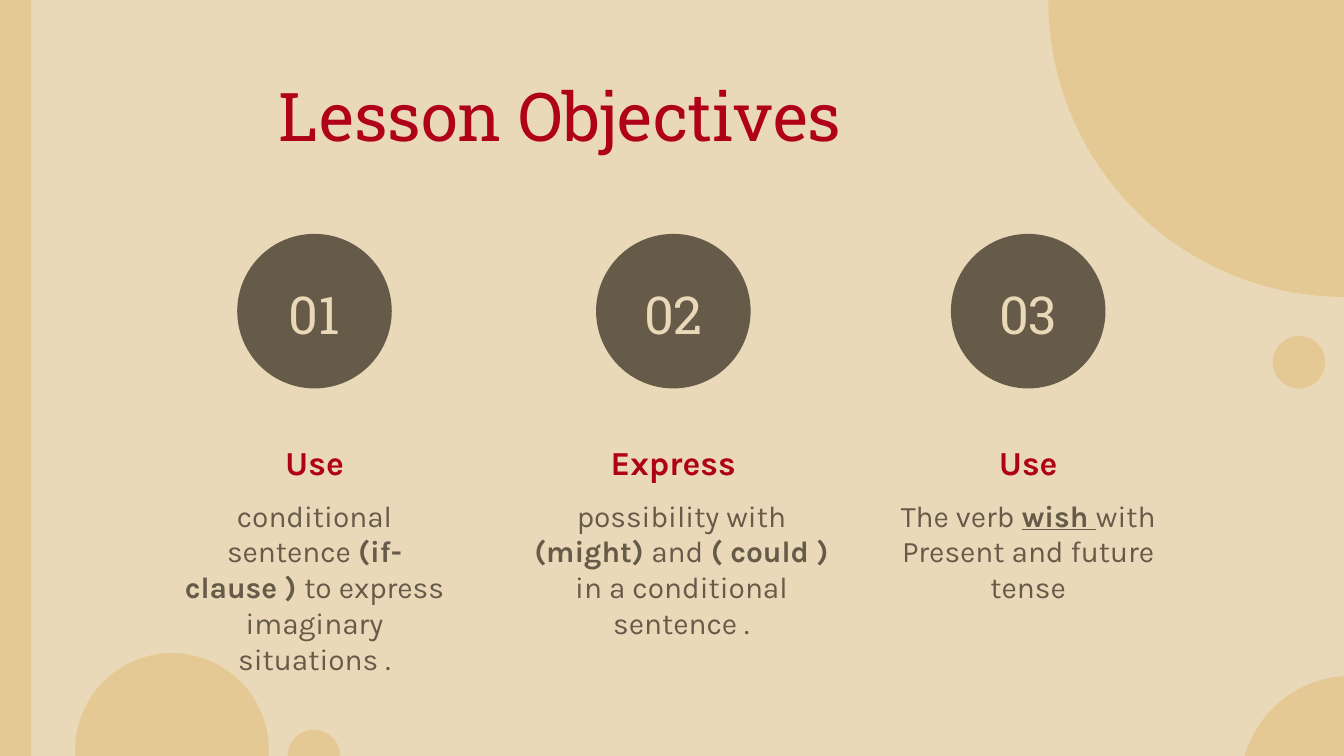
from dataclasses import dataclass

from pptx import Presentation
from pptx.dml.color import RGBColor
from pptx.enum import shapes, text
from pptx.util import Inches, Pt


@dataclass(frozen=True)
class Theme:
    sand: str = "EAD9B9"
    gold: str = "E4C994"
    brown: str = "665A49"
    red: str = "AF0118"
    serif: str = "Roboto Slab"
    sans: str = "Karla"
    title: int = 36
    number: int = 28
    heading: int = 18
    body: int = 16


class Painter:
    """Draws styled elements on the current slide."""

    def __init__(self, page, theme):
        self.page = page
        self.theme = theme

    def background(self, color):
        fill = self.page.background.fill
        fill.solid()
        fill.fore_color.rgb = RGBColor.from_string(color)

    def shape(self, kind, left, top, width, height, color):
        shape = self.page.shapes.add_shape(
            kind, Inches(left), Inches(top), Inches(width), Inches(height))
        shape.shadow.inherit = False
        shape.fill.solid()
        shape.fill.fore_color.rgb = RGBColor.from_string(color)
        shape.line.fill.background()

    def circle(self, left, top, size, color):
        self.shape(shapes.MSO_SHAPE.OVAL, left, top, size, size, color)

    def label(self, center, top, width, height, paragraphs, font, size, color,
              anchor=text.MSO_ANCHOR.TOP):
        box = self.page.shapes.add_textbox(
            Inches(center - width / 2), Inches(top), Inches(width), Inches(height))
        frame = box.text_frame
        frame.word_wrap = True
        frame.vertical_anchor = anchor
        frame.margin_left = frame.margin_right = Inches(0.1)
        frame.margin_top = frame.margin_bottom = Inches(0.1)
        for index, spans in enumerate(paragraphs):
            para = frame.add_paragraph() if index else frame.paragraphs[0]
            para.alignment = text.PP_ALIGN.CENTER
            for words, style in spans:
                span = para.add_run()
                span.text = words
                span.font.name = font
                span.font.size = Pt(size)
                span.font.color.rgb = RGBColor.from_string(color)
                span.font.bold = "b" in style
                span.font.underline = "u" in style


WIDTH = 10
HEIGHT = WIDTH * 9 / 16

BUBBLES = [(0.56, 4.86, 1.44), (7.8, -2.2, 4.41), (9.23, 5.03, 1.64),
           (2.14, 5.43, 0.39), (9.47, 2.5, 0.39)]

OBJECTIVES = [
    (2.34, "Use", 2.34, 2.3,
     [[("conditional sentence ", ""), ("(if-clause ) ", "b"),
       ("to express imaginary situations .", "")]]),
    (5.01, "Express", 5.07, 2.39,
     [[("possibility with ", ""), ("(might) ", "b"), ("and", ""),
       (" ( could )", "b")],
      [("in a conditional sentence .", "")]]),
    (7.65, "Use", 7.65, 2.32,
     [[("The verb ", ""), ("wish ", "bu"), ("with", "")],
      [("Present and future tense", "")]]),
]


def main():
    theme = Theme()
    deck = Presentation()
    deck.slide_width, deck.slide_height = Inches(WIDTH), Inches(HEIGHT)
    painter = Painter(deck.slides.add_slide(deck.slide_layouts[6]), theme)

    painter.background(theme.sand)
    for left, top, size in BUBBLES:
        painter.circle(left, top, size, theme.gold)
    painter.shape(shapes.MSO_SHAPE.RECTANGLE, 0, 0, 0.23, HEIGHT, theme.gold)

    painter.label(4.17, 0.45, 6.06, 0.63, [[("Lesson Objectives", "")]],
                  theme.serif, theme.title, theme.red)
    disc = 1.15
    for number, objective in enumerate(OBJECTIVES, 1):
        center, heading, body_center, body_width, body = objective
        painter.circle(center - disc / 2, 1.74, disc, theme.brown)
        painter.label(center, 1.95, 1.06, 0.72, [[(f"{number:02}", "")]],
                      theme.serif, theme.number, theme.sand,
                      text.MSO_ANCHOR.BOTTOM)
        painter.label(center, 3.23, 2.19, 0.42, [[(heading, "b")]],
                      theme.sans, theme.heading, theme.red,
                      text.MSO_ANCHOR.MIDDLE)
        painter.label(body_center, 3.6, body_width, 1.15, body,
                      theme.sans, theme.body, theme.brown)
    deck.save("out.pptx")


if __name__ == "__main__":
    main()
